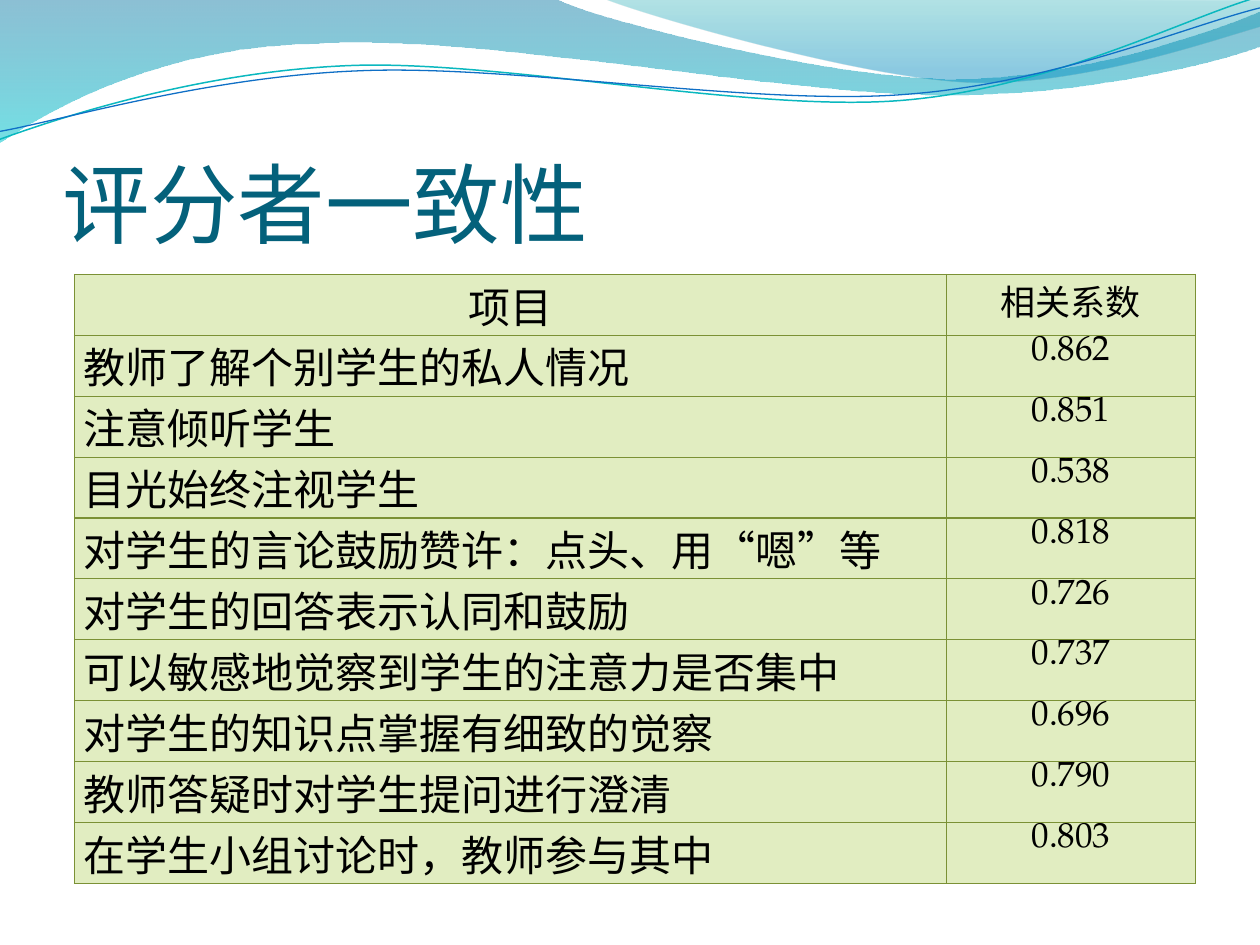
from lxml import etree
from pptx import Presentation, util as u
from pptx.dml.color import RGBColor
from pptx.enum import text
from pptx.oxml.ns import qn

TITLE = "评分者一致性"
HEADER = ("项目", "相关系数")
RATINGS = [
    ("教师了解个别学生的私人情况", "0.862"),
    ("注意倾听学生", "0.851"),
    ("目光始终注视学生", "0.538"),
    ("对学生的言论鼓励赞许：点头、用“嗯”等", "0.818"),
    ("对学生的回答表示认同和鼓励", "0.726"),
    ("可以敏感地觉察到学生的注意力是否集中", "0.737"),
    ("对学生的知识点掌握有细致的觉察", "0.696"),
    ("教师答疑时对学生提问进行澄清", "0.790"),
    ("在学生小组讨论时，教师参与其中", "0.803"),
]
COLUMN_WIDTHS = (498.25, 142.5)
ROW_HEIGHT = 34.83
CELL_FILL, BORDER = "E1EDC1", "7B9135"

# Outlines in points: a pair is a corner, six numbers are a Bézier curve
BANDS = [
    ([(0, 0), (317, -1), (343, 12, 478, 45, 546, 45), (614, 45, 690, 19, 720, 6.5),
      (721, 26), (708, 32, 626, 55, 537, 54), (448, 54, 275, 20, 185, 24.5),
      (93, 26, 33, 60, -0.5, 81.5)],
     [(0, "0074A1", 45), (100, "00C6CF", 55)]),
    ([(345, -1), (366.5, 8, 491, 44.5, 553.5, 47), (616.5, 49.5, 692, 23, 720, 15),
      (720, 0)],
     [(0, "00A1A9", 30), (80, "008BBF", 45)]),
]
# Drawn level, then tilted
WAVES = [
    ([(-2.4, 63), (33.7, 51.7, 114.3, 29.4, 199.9, 30),
      (284.9, 30.5, 425.8, 67.2, 512.5, 64.8),
      (599.2, 62.3, 676.6, 25.9, 720.1, 15.4)], "0AB8BF", 0.85),
    ([(-1.1, 58.1), (33.2, 53.7, 118.2, 32.6, 204.3, 33.2),
      (290.4, 33.2, 429.1, 63.8, 515.3, 61.4),
      (601.4, 59.4, 678.4, 30, 721.4, 21.5)], "0F6FC6", 0.75),
]
WAVE_TILT = 357.3
UNITS = 100  # freeform units per point


def color(value):
    return RGBColor.from_string(value)


def add_outline(slide, outline, close):
    points = [(part[i] * UNITS, part[i + 1] * UNITS)
              for part in outline for i in range(0, len(part), 2)]
    builder = slide.shapes.build_freeform(*points[0], scale=u.Pt(1) / UNITS)
    builder.add_line_segments(points[1:], close=close)
    shape = builder.convert_to_shape()
    shape.shadow.inherit = False

    # Join each curve's three segments into one Bézier segment
    segments = iter(list(shape.element.iter(qn("a:lnTo"))))
    for part in outline[1:]:
        first = next(segments)
        if len(part) == 6:
            first.tag = qn("a:cubicBezTo")
            for segment in (next(segments), next(segments)):
                first.append(segment[0])
                segment.getparent().remove(segment)
    return shape


def add_color(parent, value, alpha=None):
    node = etree.SubElement(parent, qn("a:srgbClr"), val=value)
    if alpha is not None:
        etree.SubElement(node, qn("a:alpha"), val=str(alpha * 1000))


def fill_gradient(shape, stops):
    shape.fill.gradient()
    shape.fill.gradient_angle = 270  # top to bottom
    stop_list = shape.element.spPr.find(qn("a:gradFill")).find(qn("a:gsLst"))
    for old_stop in list(stop_list):
        stop_list.remove(old_stop)
    for position, value, alpha in stops:
        stop = etree.SubElement(stop_list, qn("a:gs"), pos=str(position * 1000))
        add_color(stop, value, alpha)


def write(frame, content, size, font="TeX Gyre Pagella", fill="000000",
          align=text.PP_ALIGN.LEFT, spacing=None):
    paragraph = frame.paragraphs[0]
    paragraph.alignment = align
    if spacing:
        paragraph.line_spacing = u.Pt(spacing)
    run = paragraph.add_run()
    run.text = content
    run.font.size = u.Pt(size)
    run.font.name = font
    run.font.color.rgb = color(fill)


def style_cell(cell):
    cell.margin_left = cell.margin_right = u.Pt(5)
    cell.margin_top = cell.margin_bottom = 0
    properties = cell._tc.get_or_add_tcPr()
    for side in ("a:lnL", "a:lnR", "a:lnT", "a:lnB"):
        line = etree.SubElement(properties, qn(side), w=str(u.Pt(0.75)))
        add_color(etree.SubElement(line, qn("a:solidFill")), BORDER)
    cell.fill.solid()
    cell.fill.fore_color.rgb = color(CELL_FILL)


def main():
    presentation = Presentation()
    presentation.slide_width, presentation.slide_height = u.Pt(720), u.Pt(540)
    slide = presentation.slides.add_slide(presentation.slide_layouts[6])

    # Wave decoration along the top
    for outline, stops in BANDS:
        band = add_outline(slide, outline, close=True)
        fill_gradient(band, stops)
        band.line.fill.background()
    for outline, value, width in WAVES:
        wave = add_outline(slide, outline, close=False)
        wave.rotation = WAVE_TILT
        wave.fill.background()
        wave.line.color.rgb = color(value)
        wave.line.width = u.Pt(width)

    # Title
    frame = slide.shapes.add_textbox(u.Pt(36), u.Pt(55.5), u.Pt(648), u.Pt(90)).text_frame
    frame.word_wrap = True
    frame.vertical_anchor = text.MSO_ANCHOR.BOTTOM
    frame.margin_left = frame.margin_right = frame.margin_bottom = 0
    write(frame, TITLE, 50, font="Calibri", fill="04617B")

    # Table of correlation coefficients
    rows = [HEADER, *RATINGS]
    table = slide.shapes.add_table(
        len(rows), len(HEADER), u.Pt(42.5), u.Pt(156.75),
        u.Pt(sum(COLUMN_WIDTHS)), u.Pt(ROW_HEIGHT * len(rows))).table
    table.horz_banding = False
    table.first_row = False
    for column, width in zip(table.columns, COLUMN_WIDTHS):
        column.width = u.Pt(width)
    for row_index, (item, coefficient) in enumerate(rows):
        table.rows[row_index].height = u.Pt(ROW_HEIGHT)
        is_header = row_index == 0
        item_cell, value_cell = table.cell(row_index, 0), table.cell(row_index, 1)
        style_cell(item_cell)
        style_cell(value_cell)
        write(item_cell.text_frame, item, 24,
              align=text.PP_ALIGN.CENTER if is_header else text.PP_ALIGN.JUSTIFY)
        write(value_cell.text_frame, coefficient, 20, align=text.PP_ALIGN.CENTER,
              spacing=None if is_header else 20)

    presentation.save("out.pptx")


if __name__ == "__main__":
    main()
